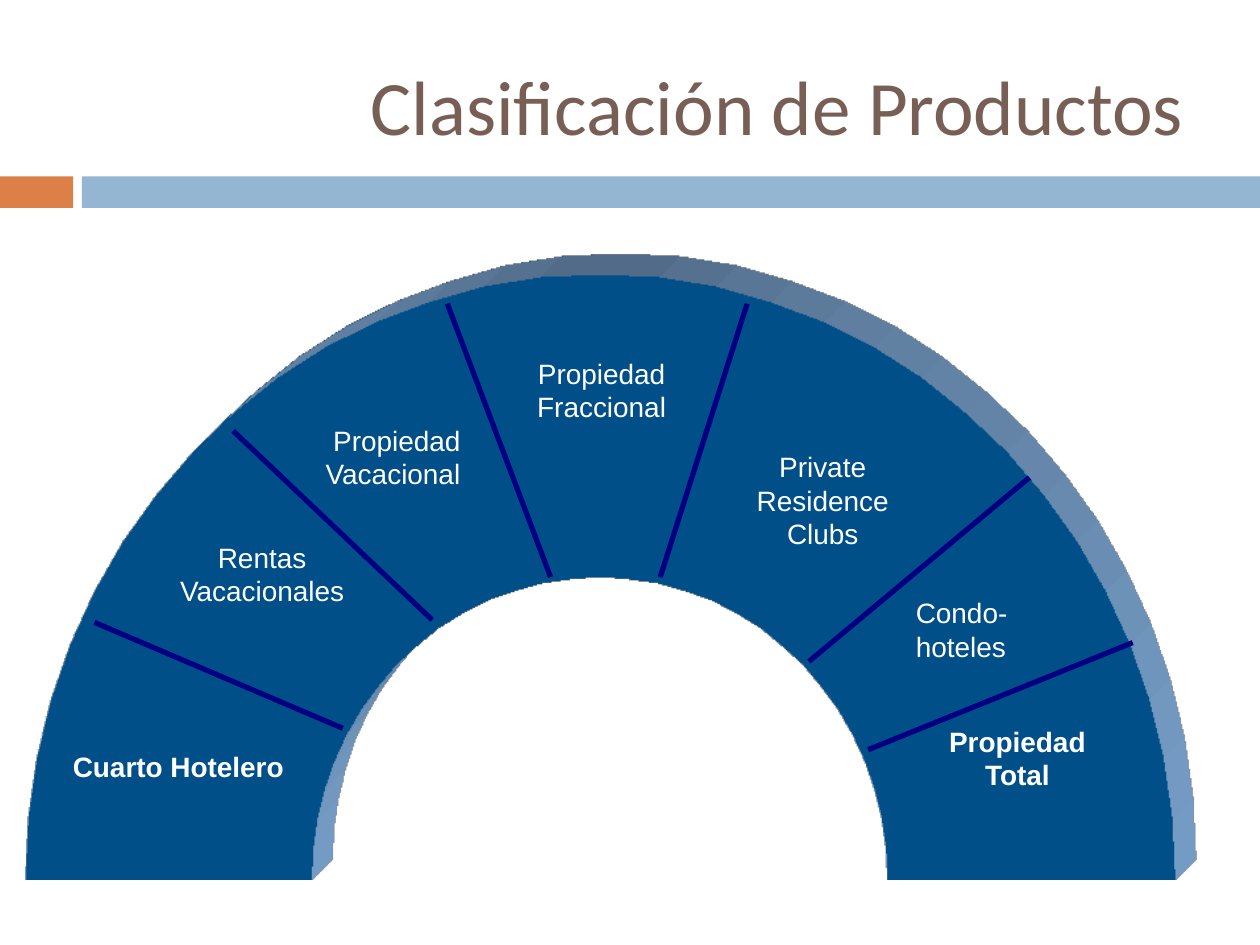
import pptx
import pptx.dml.color
import pptx.enum.shapes
import pptx.enum.text
import pptx.oxml
import pptx.oxml.ns
import pptx.util
from lxml import etree
from pptx.util import Inches

ALIGN = pptx.enum.text.PP_ALIGN
ANCHOR = pptx.enum.text.MSO_ANCHOR
FIT = pptx.enum.text.MSO_AUTO_SIZE
SPACE = pptx.oxml.ns.nsdecls("a")

# Half arch: curves and straight feet, each a list of points after the start
START = (2.48, 6.98)
PARTS = [
    [(2.48, 5.65), (3.5, 4.58), (4.77, 4.58)],
    [(6.03, 4.58), (7.05, 5.65), (7.05, 6.98)],
    [(9.34, 6.98)],
    [(9.34, 4.33), (7.29, 2.18), (4.77, 2.18)],
    [(2.24, 2.18), (0.2, 4.33), (0.2, 6.98)],
]
FRAME = 9.61

# Ends of each divider: outer x, y, then inner x, y
SPLITS = [
    (0.75, 4.94, 2.72, 5.78),
    (1.85, 3.42, 3.43, 4.92),
    (3.55, 2.41, 4.37, 4.58),
    (5.93, 2.41, 5.24, 4.58),
    (8.17, 3.79, 6.42, 5.25),
    (8.99, 5.1, 6.89, 5.95),
]

LABELS = [
    ("Cuarto Hotelero", (0.48, 5.9, 1.9, 0.37), {"bold": True, "align": ALIGN.LEFT}),
    ("Rentas\nVacacionales", (1.32, 4.24, 1.52, 0.64), {}),
    ("Propiedad\nVacacional ", (2.48, 3.31, 1.34, 0.64), {}),
    ("Propiedad\nFraccional", (4.16, 2.78, 1.23, 0.64), {}),
    ("Private \nResidence \nClubs ", (5.9, 3.52, 1.32, 0.91), {}),
    ("Condo-\nhoteles", (7.17, 4.68, 0.94, 0.64), {"align": ALIGN.LEFT}),
    ("Propiedad\nTotal", (7.42, 5.7, 1.31, 0.64), {"bold": True}),
]


def color(code):
    return pptx.dml.color.RGBColor.from_string(code)


def paint(shape, code):
    shape.shadow.inherit = False
    shape.fill.solid()
    shape.fill.fore_color.rgb = color(code)
    shape.line.fill.background()


def place(shape, box):
    shape.left, shape.top, shape.width, shape.height = map(Inches, box)


def write(frame, text, size=16, font="Arial", ink="FFFFFF", bold=False,
          align=ALIGN.CENTER, anchor=ANCHOR.TOP, wrap=False, fit=FIT.SHAPE_TO_FIT_TEXT):
    frame.text = text
    frame.word_wrap = wrap
    frame.auto_size = fit
    frame.vertical_anchor = anchor
    for para in frame.paragraphs:
        para.alignment = align
        for run in para.runs:
            run.font.size = pptx.util.Pt(size)
            run.font.name = font
            run.font.bold = bold
            run.font.color.rgb = color(ink)


def add_title(slide, text):
    title = slide.shapes.title
    place(title, (0.43, 0.36, 9.07, 0.95))
    write(title.text_frame, text, size=44, font="Calibri", ink="775F55",
          align=ALIGN.RIGHT, anchor=ANCHOR.MIDDLE, wrap=True, fit=FIT.NONE)


def add_bar(slide, left, width, fill):
    bar = slide.shapes.add_shape(pptx.enum.shapes.MSO_SHAPE.RECTANGLE,
                                 Inches(left), Inches(1.4), Inches(width), Inches(0.25))
    paint(bar, fill)


def bend(track):
    """Turn each run of three line points that forms a part into a curve."""
    lines = track.findall(pptx.oxml.ns.qn("a:lnTo"))
    for part in PARTS:
        group, lines = lines[:len(part)], lines[len(part):]
        if len(group) == 3:
            arc = etree.Element(pptx.oxml.ns.qn("a:cubicBezTo"))
            group[0].addprevious(arc)
            for line in group:
                arc.append(line[0])
                track.remove(line)


def extrude(shape, code):
    """Give the shape depth towards the top right."""
    scene = (f'<a:scene3d {SPACE}><a:camera prst="legacyObliqueTopRight"/>'
             '<a:lightRig rig="legacyFlat3" dir="b"/></a:scene3d>')
    solid = (f'<a:sp3d {SPACE} extrusionH="430200" prstMaterial="legacyMatte">'
             f'<a:extrusionClr><a:srgbClr val="{code}"/></a:extrusionClr></a:sp3d>')
    for xml in (scene, solid):
        shape._element.spPr.append(pptx.oxml.parse_xml(xml))


def add_arch(slide):
    spots = [(Inches(x), Inches(y)) for part in PARTS for x, y in part]
    pen = slide.shapes.build_freeform(*map(Inches, START))
    pen.add_line_segments(spots, close=True)
    arch = pen.convert_to_shape()
    track = arch._element.spPr.find(".//" + pptx.oxml.ns.qn("a:path"))
    bend(track)
    arch.height = Inches(FRAME)
    track.set("h", str(Inches(FRAME)))
    paint(arch, "0070C0")
    extrude(arch, "85B1E0")


def add_split(slide, ends):
    line = slide.shapes.add_connector(pptx.enum.shapes.MSO_CONNECTOR.STRAIGHT,
                                      *map(Inches, ends))
    line.line.color.rgb = color("000080")
    line.line.width = pptx.util.Pt(3)
    etree.SubElement(line._element.spPr, pptx.oxml.ns.qn("a:effectLst"))


def add_label(slide, text, box, style):
    label = slide.shapes.add_textbox(*map(Inches, box))
    write(label.text_frame, text, **style)


def main():
    deck = pptx.Presentation()
    deck.slide_width, deck.slide_height = Inches(10), Inches(7.5)
    slide = deck.slides.add_slide(deck.slide_layouts[5])
    add_bar(slide, 0, 0.58, "DD8047")
    add_bar(slide, 0.65, 9.35, "94B6D2")
    add_title(slide, "Clasificación de Productos")
    add_arch(slide)
    for ends in SPLITS:
        add_split(slide, ends)
    for text, box, style in LABELS:
        add_label(slide, text, box, style)
    deck.save("out.pptx")


if __name__ == "__main__":
    main()
